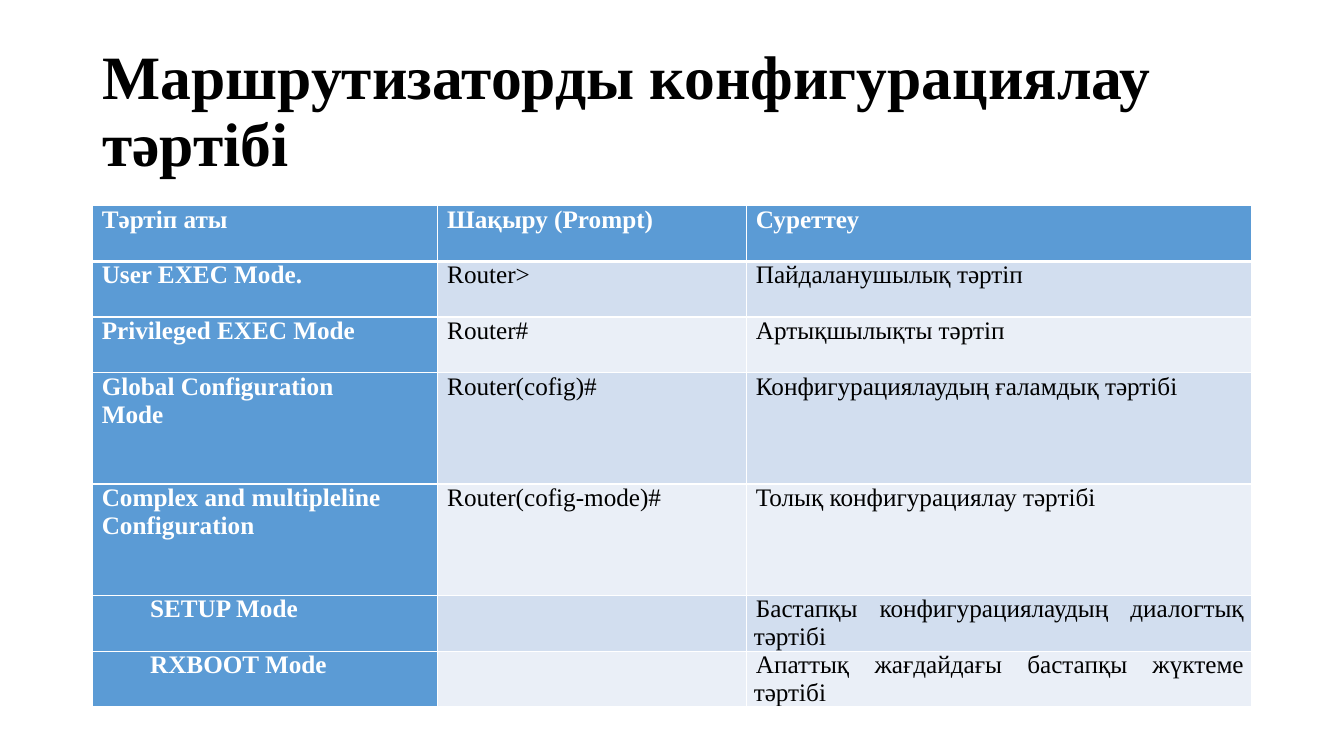
from dataclasses import dataclass

from lxml import etree
from pptx import Presentation
from pptx.dml.color import RGBColor
from pptx.enum.text import MSO_ANCHOR, PP_ALIGN
from pptx.oxml.ns import qn
from pptx.util import Pt

LEFT, JUSTIFY = PP_ALIGN.LEFT, PP_ALIGN.JUSTIFY
MIDDLE = MSO_ANCHOR.MIDDLE
EMU_PER_PX = 9525
TITLE_LAYOUT = 5


@dataclass(frozen=True)
class Theme:
    """Colours, font and type sizes of the slide."""
    font: str = "Times New Roman"
    title_size: int = 44
    cell_size: int = 18
    ink: str = "000000"
    paper: str = "FFFFFF"
    accent: str = "5B9BD5"
    bands: tuple = ("EAEFF7", "D2DEEF")
    rule: int = 1
    header_rule: int = 3


def px(length):
    """Turn px into EMU."""
    return length * EMU_PER_PX


class SlideBuilder:
    """Places styled elements on the current slide."""

    def __init__(self, deck, theme):
        """Add a title-only slide to the deck."""
        self.theme = theme
        self.slide = deck.slides.add_slide(deck.slide_layouts[TITLE_LAYOUT])

    def style(self, paragraph, size, color, bold, align):
        """Give a paragraph its font and alignment."""
        paragraph.alignment = align
        font = paragraph.font
        font.name, font.size, font.bold = self.theme.font, Pt(size), bold
        font.color.rgb = RGBColor.from_string(color)

    def title(self, text, left, top, width, height):
        """Fill and move the title placeholder."""
        heading = self.slide.shapes.title
        heading.left, heading.top = px(left), px(top)
        heading.width, heading.height = px(width), px(height)
        frame = heading.text_frame
        frame.text = text
        frame.word_wrap = True
        frame.vertical_anchor = MIDDLE
        line = frame.paragraphs[0]
        line.line_spacing = 0.9
        self.style(line, self.theme.title_size, self.theme.ink, True, LEFT)

    def borders(self, cell, bottom):
        """Draw the four borders of a cell."""
        rule = self.theme.rule
        props = cell._tc.get_or_add_tcPr()
        for side, weight in zip("LRTB", (rule, rule, rule, bottom)):
            edge = etree.SubElement(props, qn(f"a:ln{side}"), w=str(Pt(weight)))
            fill = etree.SubElement(edge, qn("a:solidFill"))
            etree.SubElement(fill, qn("a:srgbClr"), val=self.theme.paper)

    def cell(self, cell, text, row, column):
        """Write and colour one cell by its place in the table."""
        theme = self.theme
        emphasis = row == 0 or column == 0
        self.borders(cell, theme.header_rule if row == 0 else theme.rule)
        cell.fill.solid()
        cell.fill.fore_color.rgb = RGBColor.from_string(
            theme.accent if emphasis else theme.bands[row % 2])
        cell.margin_left = cell.margin_right = px(7)
        cell.margin_top = cell.margin_bottom = 0
        cell.text = text
        for line in cell.text_frame.paragraphs:
            self.style(line, theme.cell_size,
                       theme.paper if emphasis else theme.ink, emphasis, JUSTIFY)
            props = line._p.get_or_add_pPr()
            props.set("marL", "0")
            props.set("indent", str(px(2)))

    def table(self, rows, left, top, widths, heights):
        """Add a table with a header row and a header column."""
        grid = self.slide.shapes.add_table(
            len(rows), len(widths), px(left), px(top),
            px(sum(widths)), px(sum(heights))).table
        grid.first_col = True
        for column, width in zip(grid.columns, widths):
            column.width = px(width)
        for r, (texts, height) in enumerate(zip(rows, heights)):
            grid.rows[r].height = px(height)
            for c, text in enumerate(texts):
                self.cell(grid.cell(r, c), text, r, c)


MODES = [
    ("Тәртіп аты", "Шақыру (Prompt)", "Суреттеу"),
    ("User EXEC Mode.", "Router>", "Пайдаланушылық тәртіп"),
    ("Privileged EXEC Mode", "Router#", "Артықшылықты тәртіп"),
    ("Global Configuration\nMode", "Router(cofig)#",
     "Конфигурациялаудың ғаламдық тәртібі"),
    ("Complex and multipleline\nConfiguration", "Router(cofig-mode)#",
     "Толық конфигурациялау тәртібі"),
    ("\tSETUP Mode", "", "Бастапқы конфигурациялаудың диалогтық тәртібі"),
    ("\tRXBOOT Mode", "", "Апаттық жағдайдағы бастапқы жүктеме тәртібі"),
]


def main():
    """Build and save the slide."""
    deck = Presentation()
    deck.slide_width, deck.slide_height = px(1280), px(720)
    builder = SlideBuilder(deck, Theme())
    builder.title("Маршрутизаторды конфигурациялау тәртібі", 88, 38, 1104, 139)
    row_height = 53
    heights = [row_height * (2 if "\n" in name else 1) for name, _, _ in MODES]
    builder.table(MODES, 88, 196, (329, 294, 481), heights)
    deck.save("out.pptx")


if __name__ == "__main__":
    main()
